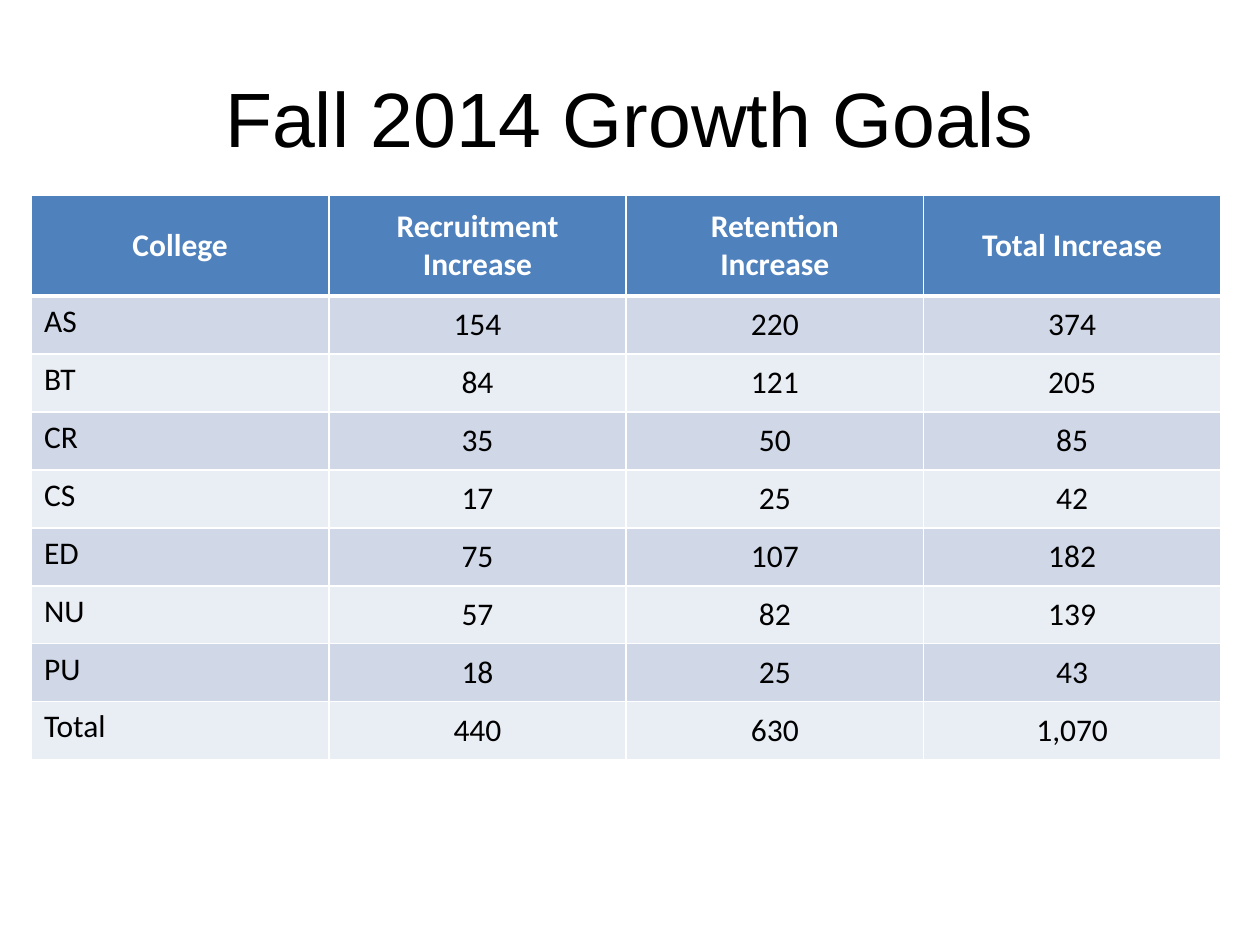
from lxml import etree
from pptx import Presentation
from pptx.dml.color import RGBColor
from pptx.enum.text import MSO_ANCHOR, PP_ALIGN
from pptx.oxml.ns import qn
from pptx.util import Inches, Pt

CENTER, LEFT = PP_ALIGN.CENTER, PP_ALIGN.LEFT
MIDDLE, TOP = MSO_ANCHOR.MIDDLE, MSO_ANCHOR.TOP

BLACK = RGBColor(0x00, 0x00, 0x00)
WHITE = RGBColor(0xFF, 0xFF, 0xFF)
HEADER_BLUE = RGBColor(0x4F, 0x81, 0xBD)
BANDS = (RGBColor(0xD0, 0xD8, 0xE8), RGBColor(0xE9, 0xED, 0xF4))

TITLE = "Fall 2014 Growth Goals"
# A line break in a cell starts a new paragraph.
HEADER = ("College", "Recruitment Increase", "Retention\nIncrease", "Total Increase")
GOALS = [
    ("AS", "154", "220", "374"),
    ("BT", "84", "121", "205"),
    ("CR", "35", "50", "85"),
    ("CS", "17", "25", "42"),
    ("ED", "75", "107", "182"),
    ("NU", "57", "82", "139"),
    ("PU", "18", "25", "43"),
    ("Total", "440", "630", "1,070"),
]

TABLE_LEFT, TABLE_TOP = 0.25, 1.55
COLUMN_WIDTH = 2.36
HEADER_HEIGHT, ROW_HEIGHT = 0.8, 0.46
THIN, THICK = 1, 3


def write_text(frame, text, font_name, size, color, bold=False, align=CENTER):
    for index, line in enumerate(text.split("\n")):
        paragraph = frame.paragraphs[0] if index == 0 else frame.add_paragraph()
        paragraph.alignment = align
        run = paragraph.add_run()
        run.text = line
        run.font.name = font_name
        run.font.size = Pt(size)
        run.font.bold = bold
        run.font.color.rgb = color


def set_borders(cell, top, bottom):
    """Draw white cell borders; widths are in points."""
    properties = cell._tc.get_or_add_tcPr()
    for side, width in (("L", THIN), ("R", THIN), ("T", top), ("B", bottom)):
        line = etree.SubElement(properties, qn(f"a:ln{side}"), w=str(Pt(width)))
        fill = etree.SubElement(line, qn("a:solidFill"))
        etree.SubElement(fill, qn("a:srgbClr"), val=str(WHITE))


def add_title(slide):
    box = slide.shapes.add_textbox(Inches(0.5), Inches(0.3), Inches(9), Inches(1.25))
    frame = box.text_frame
    frame.word_wrap = True
    frame.vertical_anchor = MIDDLE
    write_text(frame, TITLE, "Arial", 44, BLACK)


def add_goals_table(slide):
    rows = [HEADER] + GOALS
    table = slide.shapes.add_table(
        len(rows), len(HEADER), Inches(TABLE_LEFT), Inches(TABLE_TOP),
        Inches(COLUMN_WIDTH * len(HEADER)),
        Inches(HEADER_HEIGHT + ROW_HEIGHT * len(GOALS)),
    ).table
    for column in table.columns:
        column.width = Inches(COLUMN_WIDTH)

    for row_index, values in enumerate(rows):
        is_header = row_index == 0
        table.rows[row_index].height = Inches(HEADER_HEIGHT if is_header else ROW_HEIGHT)
        background = HEADER_BLUE if is_header else BANDS[(row_index - 1) % 2]
        for column_index, value in enumerate(values):
            is_label = column_index == 0 and not is_header
            cell = table.cell(row_index, column_index)
            set_borders(cell, THICK if row_index == 1 else THIN,
                        THICK if is_header else THIN)
            cell.fill.solid()
            cell.fill.fore_color.rgb = background
            cell.vertical_anchor = TOP if is_label else MIDDLE
            write_text(cell.text_frame, value, "Calibri", 18,
                       WHITE if is_header else BLACK, bold=is_header,
                       align=LEFT if is_label else CENTER)


def main():
    presentation = Presentation()
    presentation.slide_width = Inches(10)
    presentation.slide_height = Inches(7.5)
    slide = presentation.slides.add_slide(presentation.slide_layouts[6])
    add_title(slide)
    add_goals_table(slide)
    presentation.save("out.pptx")


if __name__ == "__main__":
    main()
